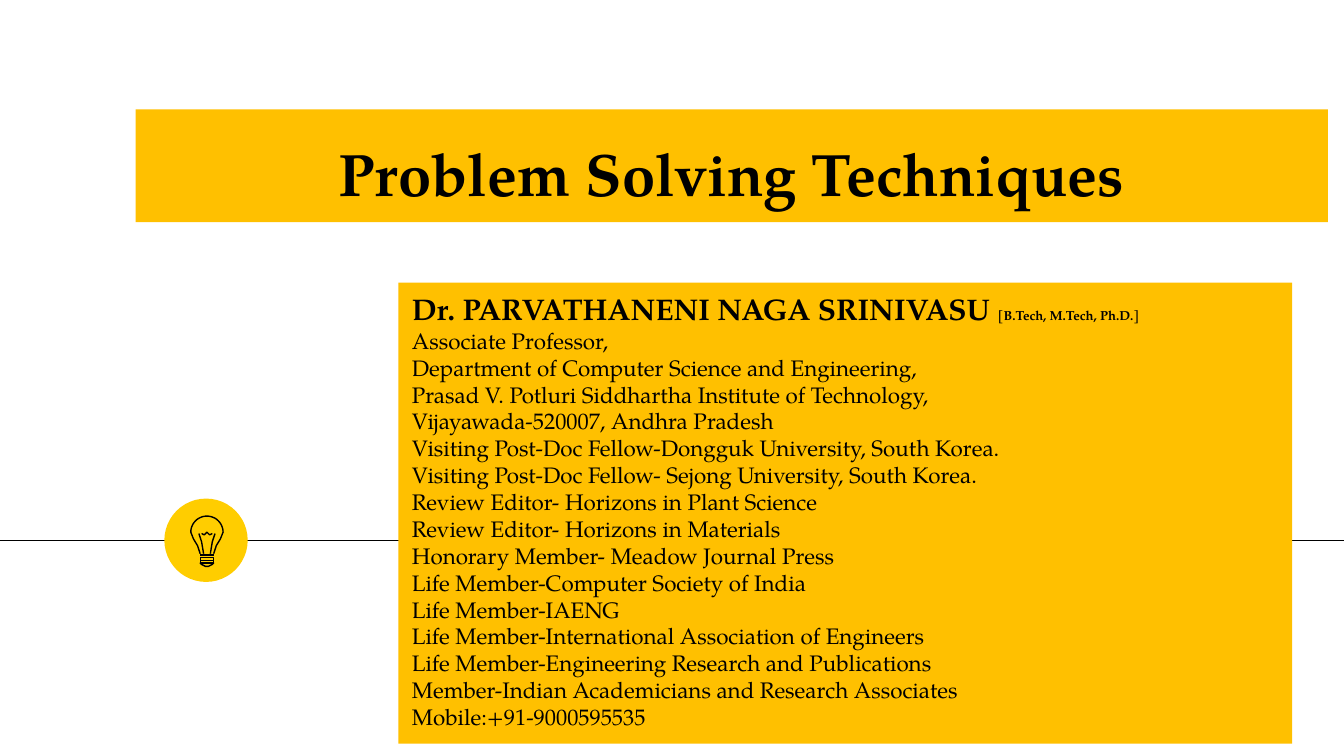
from math import cos, pi, sin

from lxml.etree import SubElement
from pptx import Presentation
from pptx.dml.color import RGBColor
from pptx.enum.shapes import MSO_CONNECTOR as Connector, MSO_SHAPE as Shape
from pptx.enum.text import MSO_ANCHOR as Anchor, MSO_AUTO_SIZE as AutoSize, PP_ALIGN as Align
from pptx.oxml.ns import qn
from pptx.util import Inches, Pt

AMBER = RGBColor(0xFF, 0xC0, 0x00)
YELLOW = RGBColor(0xFF, 0xCD, 0x00)
BLACK = RGBColor(0x00, 0x00, 0x00)
FONT = "TeX Gyre Pagella"
COLUMNS = 100

NAME = [("Dr. PARVATHANENI NAGA SRINIVASU ", 16, True), ("[B.Tech, M.Tech, Ph.D.]", 7, True)]
DETAILS = [
    "Associate Professor,",
    "Department of Computer Science and Engineering,",
    "Prasad V. Potluri Siddhartha Institute of Technology,",
    "Vijayawada-520007, Andhra Pradesh",
    "Visiting Post-Doc Fellow-Dongguk University, South Korea.",
    "Visiting Post-Doc Fellow- Sejong University, South Korea.",
    "Review Editor- Horizons in Plant Science",
    "Review Editor- Horizons in Materials",
    "Honorary Member- Meadow Journal Press",
    "Life Member-Computer Society of India",
    "Life Member-IAENG",
    "Life Member-International Association of Engineers",
    "Life Member-Engineering Research and Publications",
    "Member-Indian Academicians and Research Associates",
    "Mobile:+91-9000595535",
]


class SlideBuilder:
    def __init__(self, deck):
        self.unit = deck.slide_width / COLUMNS
        self.slide = deck.slides.add_slide(deck.slide_layouts[0])
        self.shapes = self.slide.shapes

    def grid(self, *cells):
        return [round(cell * self.unit) for cell in cells]

    def line(self, shapes, *ends):
        line = shapes.add_connector(Connector.STRAIGHT, *self.grid(*ends))
        line.line.color.rgb = BLACK
        line.line.width = Pt(0.75)
        SubElement(line._element.spPr, qn("a:effectLst"))

    def circle(self, *area):
        circle = self.shapes.add_shape(Shape.OVAL, *self.grid(*area))
        circle.shadow.inherit = False
        circle.fill.solid()
        circle.fill.fore_color.rgb = YELLOW
        circle.line.fill.background()

    def outline(self, shapes, center, offsets, close=False):
        points = [self.grid(center[0] + x, center[1] + y) for x, y in offsets]
        builder = shapes.build_freeform(*points[0])
        builder.add_line_segments(points[1:], close=close)
        outline = builder.convert_to_shape()
        outline.shadow.inherit = False
        outline.fill.background()
        outline.line.color.rgb = BLACK
        outline.line.width = Pt(0.75)

    def bulb(self, x, y):
        shapes = self.shapes.add_group_shape().shapes
        center = (x, y)
        for top in (2.1, 1.9):
            band = [(-0.5, top), (0.5, top), (0.5, top + 0.2), (-0.5, top + 0.2)]
            self.outline(shapes, center, band, close=True)
        base = [(-0.5, 2.3), (-0.4, 2.4), (-0.1, 2.55), (0.1, 2.55), (0.4, 2.4), (0.5, 2.3)]
        self.outline(shapes, center, base, close=True)
        neck = [(0.5, 1.6), (0.7, 1), (1, 0.5)]
        dome = [(1.2 * cos(pi * i / 24), -1.2 * sin(pi * i / 24)) for i in range(25)]
        self.outline(shapes, center, neck + dome + [(-a, b) for a, b in reversed(neck)])
        for side in (-1, 1):
            self.outline(shapes, center, [(side * 0.6, 0.1), (side * 0.4, 0.7), (side * 0.25, 1.6)])
        self.outline(shapes, center, [(-0.4, 0.1), (-0.2, 0.2), (0, 0), (0.2, 0.2), (0.4, 0.1)])
        self.outline(shapes, center, [(-0.5, 1.7), (0.5, 1.7)])

    def panel(self, box, area, paragraphs, align):
        self.shapes._spTree.append(box._element)
        box.left, box.top, box.width, box.height = self.grid(*area)
        box.fill.solid()
        box.fill.fore_color.rgb = AMBER
        frame = box.text_frame
        frame.word_wrap = True
        frame.auto_size = AutoSize.NONE
        frame.vertical_anchor = Anchor.BOTTOM
        frame.margin_left = frame.margin_right = Inches(0.1)
        frame.margin_top = frame.margin_bottom = Inches(0.1)
        frame.text = "\n".join("" for _ in paragraphs)
        for para, spans in zip(frame.paragraphs, paragraphs):
            para.alignment = align
            para.space_before = Pt(0)
            for text, size, bold in spans:
                span = para.add_run()
                span.text = text
                span.font.name = FONT
                span.font.size = Pt(size)
                span.font.bold = bold
                span.font.color.rgb = BLACK


def main():
    deck = Presentation()
    deck.slide_width = Inches(10)
    deck.slide_height = deck.slide_width * 9 // 16
    page = SlideBuilder(deck)
    title, body = page.slide.placeholders
    page.line(page.shapes, -0.1, 40.2, COLUMNS + 0.1, 40.2)
    page.circle(12.23, 37.1, 6.2, 6.2)
    page.panel(title, (10.1, 8.13, 88.7, 8.4), [[("Problem Solving Techniques", 32, True)]], Align.CENTER)
    page.bulb(15.4, 39.6)
    details = [[(text, 12, False)] for text in DETAILS]
    page.panel(body, (29.65, 21.03, 66.5, 34.3), [NAME] + details, Align.LEFT)
    deck.save("out.pptx")


if __name__ == "__main__":
    main()
